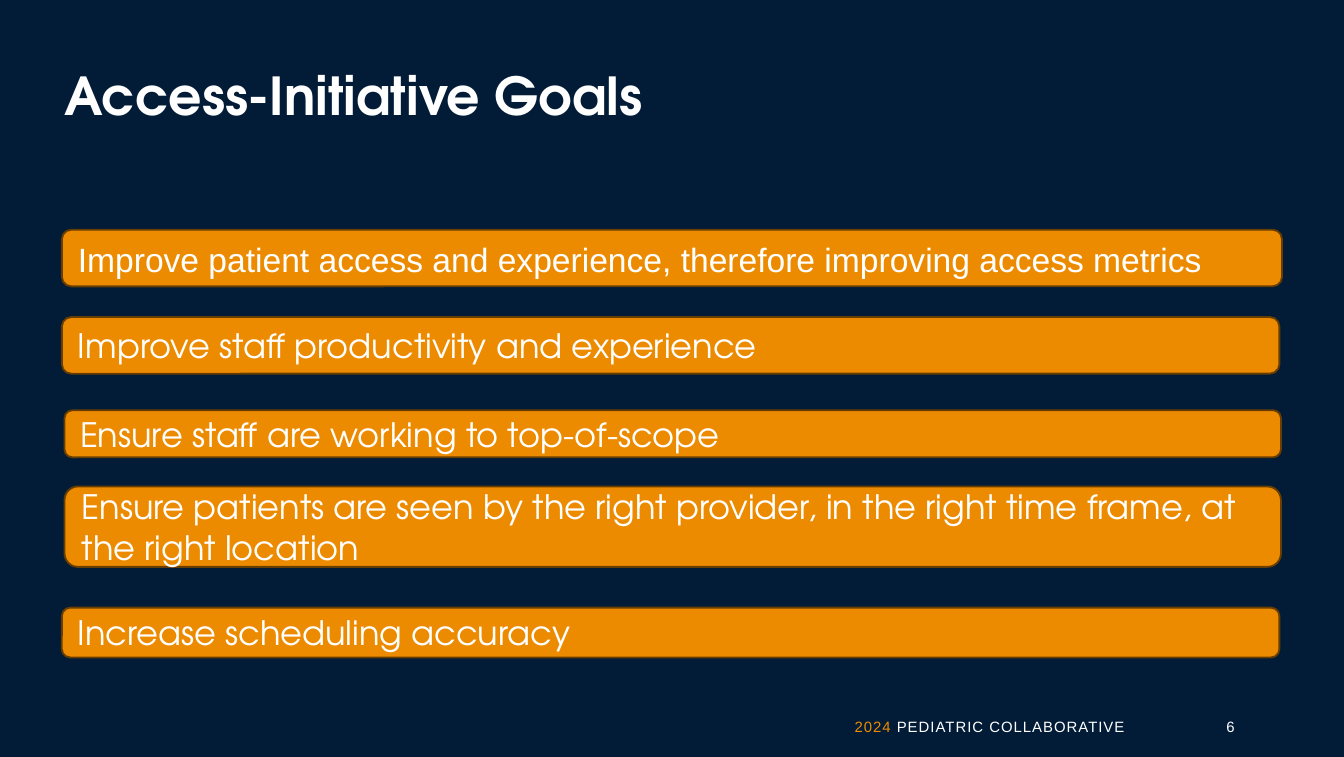
from pptx import Presentation
from pptx.dml.color import RGBColor
from pptx.enum.shapes import MSO_SHAPE
from pptx.enum.text import MSO_ANCHOR, PP_ALIGN
from pptx.util import Cm, Pt

ROUNDED = MSO_SHAPE.ROUNDED_RECTANGLE
TOP, MIDDLE = MSO_ANCHOR.TOP, MSO_ANCHOR.MIDDLE
LEFT, CENTER, RIGHT = PP_ALIGN.LEFT, PP_ALIGN.CENTER, PP_ALIGN.RIGHT

COLORS = {"navy": "021C37", "orange": "ED8B00", "brown": "683D00", "white": "FFFFFF"}
BODY_FONT, DISPLAY_FONT = "Arial", "TeX Gyre Adventor"

# text, font, anchor, (left, top, width, height) in cm
GOALS = [
    ("Improve patient access and experience, therefore improving access metrics",
     BODY_FONT, TOP, (1.17, 4.34, 23.06, 1.07)),
    ("Improve staff productivity and experience",
     DISPLAY_FONT, MIDDLE, (1.17, 5.99, 23.01, 1.07)),
    ("Ensure staff are working to top-of-scope",
     DISPLAY_FONT, MIDDLE, (1.22, 7.75, 22.99, 0.89)),
    ("Ensure patients are seen by the right provider, in the right time frame, "
     "at the right location",
     DISPLAY_FONT, MIDDLE, (1.22, 9.19, 22.99, 1.52)),
    ("Increase scheduling accuracy",
     DISPLAY_FONT, MIDDLE, (1.17, 11.48, 23.01, 0.94)),
]


def rgb(name):
    return RGBColor.from_string(COLORS[name])


class GoalSlide:
    def __init__(self, prs):
        self.slide = prs.slides.add_slide(prs.slide_layouts[6])
        background = self.slide.background.fill
        background.solid()
        background.fore_color.rgb = rgb("navy")

    def set_text(self, frame, text, font, size, align=LEFT, bold=False):
        frame.word_wrap = True
        paragraph = frame.paragraphs[0]
        paragraph.text = text
        paragraph.alignment = align
        paragraph.font.name = font
        paragraph.font.size = Pt(size)
        paragraph.font.bold = bold
        paragraph.font.color.rgb = rgb("white")
        return paragraph

    def text_box(self, box):
        frame = self.slide.shapes.add_textbox(*map(Cm, box)).text_frame
        frame.vertical_anchor = TOP
        return frame

    def title(self, text, box):
        frame = self.text_box(box)
        frame.margin_left = frame.margin_top = frame.margin_right = 0
        self.set_text(frame, text, DISPLAY_FONT, 28, bold=True)

    def goal(self, text, font, anchor, box):
        bar = self.slide.shapes.add_shape(ROUNDED, *map(Cm, box))
        bar.shadow.inherit = False
        bar.fill.solid()
        bar.fill.fore_color.rgb = rgb("orange")
        bar.line.color.rgb = rgb("brown")
        bar.line.width = Pt(1)
        bar.text_frame.vertical_anchor = anchor
        self.set_text(bar.text_frame, text, font, 18)

    def page_number(self, number, box):
        frame = self.text_box(box)
        frame.margin_bottom = 0
        self.set_text(frame, number, BODY_FONT, 8, CENTER).line_spacing = 1.2

    def footer(self, year, name, box):
        """Letter-spaced footer with the year picked out in orange."""
        paragraph = self.set_text(self.text_box(box), year, BODY_FONT, 8, RIGHT)
        paragraph.line_spacing = 1.2
        paragraph.runs[0].font.color.rgb = rgb("orange")
        paragraph.add_run().text = name
        for run in paragraph.runs:
            run._r.get_or_add_rPr().set("spc", "50")


def main():
    prs = Presentation()
    prs.slide_width, prs.slide_height = Cm(25.4), Cm(14.3)
    page = GoalSlide(prs)
    page.page_number("6", (22.71, 13.36, 1.09, 0.66))
    page.footer("2024", " PEDIATRIC COLLABORATIVE", (15.21, 13.36, 6.3, 0.64))
    page.title("Access-Initiative Goals", (1.22, 1.19, 23.01, 2.39))
    for goal in GOALS:
        page.goal(*goal)
    prs.save("out.pptx")


if __name__ == "__main__":
    main()
